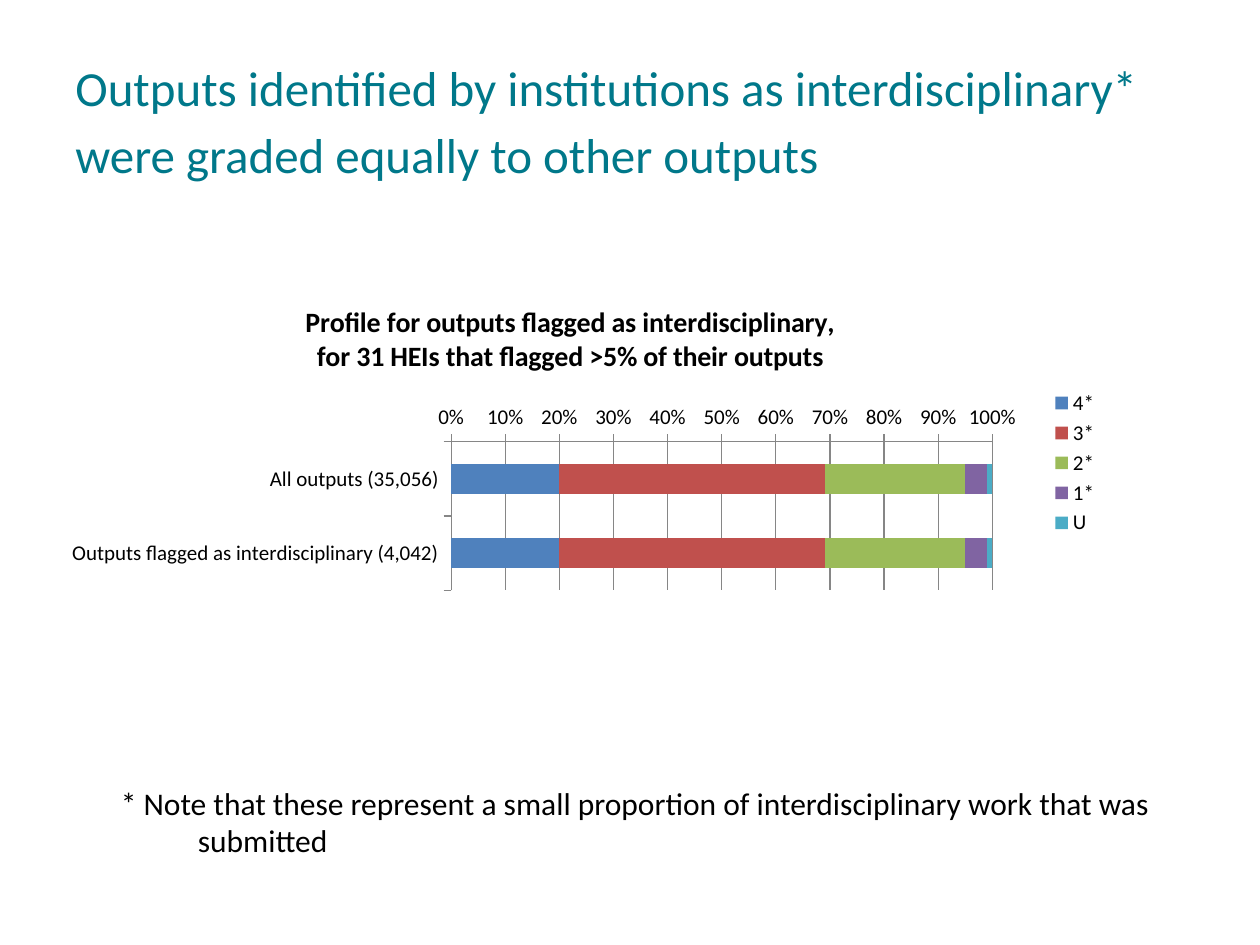
from lxml import etree
from pptx import Presentation
from pptx.chart.data import CategoryChartData
from pptx.dml.color import RGBColor
from pptx.enum.chart import XL_CHART_TYPE, XL_LEGEND_POSITION, XL_TICK_MARK
from pptx.enum.text import MSO_ANCHOR
from pptx.oxml.ns import qn
from pptx.util import Pt

STACKED_BAR = XL_CHART_TYPE.BAR_STACKED_100
LEGEND_RIGHT = XL_LEGEND_POSITION.RIGHT
TICK_OUT = XL_TICK_MARK.OUTSIDE
MIDDLE, TOP = MSO_ANCHOR.MIDDLE, MSO_ANCHOR.TOP

FONT = "Calibri"
TEAL = RGBColor(0x00, 0x78, 0x8A)
BLACK = RGBColor(0, 0, 0)
GREY = RGBColor(0x86, 0x86, 0x86)

CATEGORIES = ["All outputs (35,056)", "Outputs flagged as interdisciplinary (4,042)"]
GRADES = [
    ("4*", (20, 20), RGBColor(0x4F, 0x81, 0xBD)),
    ("3*", (49, 49), RGBColor(0xC0, 0x50, 0x4D)),
    ("2*", (26, 26), RGBColor(0x9B, 0xBB, 0x59)),
    ("1*", (4, 4), RGBColor(0x80, 0x64, 0xA2)),
    ("U", (1, 1), RGBColor(0x4B, 0xAC, 0xC6)),
]
CHART_TITLE = ("Profile for outputs flagged as interdisciplinary,\n"
               "for 31 HEIs that flagged >5% of their outputs")
PLOT_AREA = {"x": 0.39, "y": 0.44, "w": 0.5, "h": 0.42}


def style_font(font, size, color=BLACK, bold=False):
    font.name, font.size, font.bold = FONT, Pt(size), bold
    font.color.rgb = color


def add_text(slide, box, text, size, color, anchor):
    tf = slide.shapes.add_textbox(*map(Pt, box)).text_frame
    tf.word_wrap = True
    tf.vertical_anchor = anchor
    p = tf.paragraphs[0]
    r = p.add_run()
    r.text = text
    style_font(r.font, size, color)
    return p


def add_heading(slide, box):
    p = add_text(slide, box, "Outputs identified by institutions as interdisciplinary* "
                 "were graded equally to other outputs", 28, TEAL, MIDDLE)
    p.line_spacing = Pt(38)


def add_note(slide, box):
    p = add_text(slide, box, "* Note that these represent a small proportion of "
                 "interdisciplinary work that was submitted", 18, BLACK, TOP)
    # Hanging indent for the second line
    ppr = p._p.get_or_add_pPr()
    ppr.set("marL", str(Pt(44)))
    ppr.set("indent", str(-Pt(44)))


def set_plot_layout(chart):
    plot_area = chart._chartSpace.chart.plotArea
    for old in plot_area.findall(qn("c:layout")):
        plot_area.remove(old)
    layout = etree.Element(qn("c:layout"))
    manual = etree.SubElement(layout, qn("c:manualLayout"))
    values = {"layoutTarget": "inner", "xMode": "edge", "yMode": "edge", **PLOT_AREA}
    for tag, value in values.items():
        etree.SubElement(manual, qn(f"c:{tag}")).set("val", str(value))
    plot_area.insert(0, layout)


def add_profile_chart(slide, box):
    data = CategoryChartData()
    data.categories = CATEGORIES
    for name, values, _ in GRADES:
        data.add_series(name, values)
    chart = slide.shapes.add_chart(STACKED_BAR, *map(Pt, box), data).chart
    style_font(chart.font, 10)

    # Title
    chart.has_title = True
    chart.chart_title.include_in_layout = False
    tf = chart.chart_title.text_frame
    tf.text = CHART_TITLE
    for p in tf.paragraphs:
        style_font(p.runs[0].font, 16, bold=True)

    # Bars
    plot = chart.plots[0]
    plot.gap_width, plot.overlap, plot.vary_by_categories = 150, 100, False
    for series, (_, _, color) in zip(plot.series, GRADES):
        series.format.fill.solid()
        series.format.fill.fore_color.rgb = color

    # Axes
    for axis in (chart.category_axis, chart.value_axis):
        style_font(axis.tick_labels.font, 12)
        axis.major_tick_mark = TICK_OUT
        axis.format.line.color.rgb = GREY
    chart.category_axis.reverse_order = True
    value_axis = chart.value_axis
    for name, value in {"minimum_scale": 0, "maximum_scale": 1, "major_unit": 0.1,
                        "has_major_gridlines": True}.items():
        setattr(value_axis, name, value)
    value_axis.major_gridlines.format.line.color.rgb = GREY
    value_axis.tick_labels.number_format = "0%"
    value_axis.tick_labels.number_format_is_linked = False

    # Legend
    chart.has_legend = True
    chart.legend.position = LEGEND_RIGHT
    chart.legend.include_in_layout = False
    style_font(chart.legend.font, 12)
    set_plot_layout(chart)


def main():
    prs = Presentation()
    prs.slide_width, prs.slide_height = Pt(720), Pt(540)
    s = prs.slides.add_slide(prs.slide_layouts[6])
    add_heading(s, (36, 21.6, 661.7, 90))
    add_note(s, (62, 444.2, 612, 51))
    add_profile_chart(s, (16.6, 163.4, 618.5, 202.3))
    prs.save("out.pptx")


if __name__ == "__main__":
    main()
